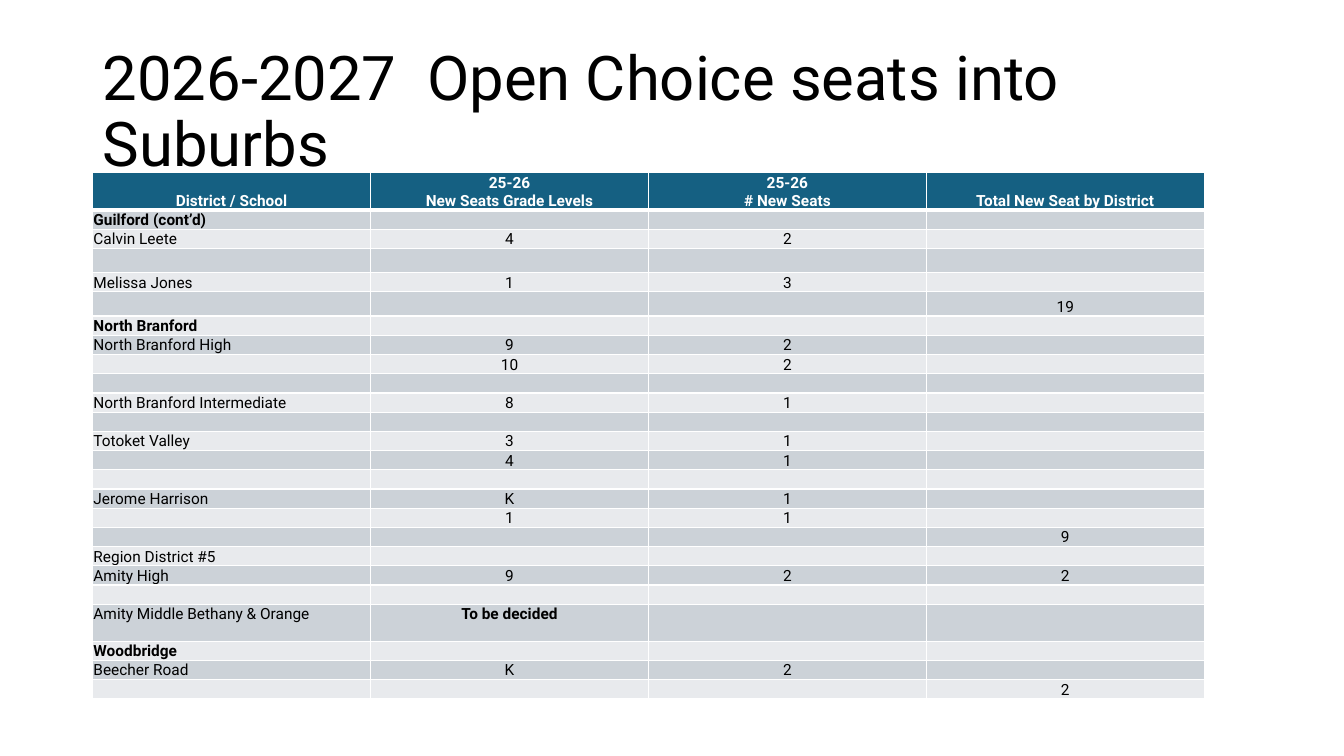
from dataclasses import dataclass

import pptx
import pptx.dml.color
import pptx.enum.text
import pptx.oxml.ns
import pptx.table
import pptx.util
from lxml import etree

Pt = pptx.util.Pt
RGBColor = pptx.dml.color.RGBColor
Align = pptx.enum.text.PP_ALIGN
Anchor = pptx.enum.text.MSO_ANCHOR
qn = pptx.oxml.ns.qn

FONT = "Roboto"
BLACK = RGBColor(0x00, 0x00, 0x00)
WHITE = RGBColor(0xFF, 0xFF, 0xFF)
HEADER_BLUE = RGBColor(0x15, 0x60, 0x82)
BAND_DARK = RGBColor(0xCC, 0xD2, 0xD8)
BAND_LIGHT = RGBColor(0xE8, 0xEA, 0xED)

COLUMN_WIDTH = 198.5
LINE, SPACED, DOUBLE = 13.45, 17.3, 26.5


@dataclass(frozen=True)
class SeatRow:
    school: str = ""
    grade: str = ""
    seats: str = ""
    total: str = ""
    height: float = LINE
    bold: tuple[int, ...] = ()
    anchor: Anchor = Anchor.BOTTOM

    def texts(self) -> tuple[str, ...]:
        return self.school, self.grade, self.seats, self.total


def district(name: str) -> SeatRow:
    return SeatRow(name, bold=(0,))


ROWS = [
    SeatRow("District / School", "25-26\nNew Seats Grade Levels", "25-26\n# New Seats",
            "Total New Seat by District", height=DOUBLE, bold=(0, 1, 2, 3)),
    district("Guilford (cont’d)"),
    SeatRow("Calvin Leete", "4", "2"),
    SeatRow(height=SPACED),
    SeatRow("Melissa Jones", "1", "3"),
    SeatRow(total="19", height=SPACED),
    district("North Branford"),
    SeatRow("North Branford High", "9", "2"),
    SeatRow(grade="10", seats="2"),
    SeatRow(),
    SeatRow("North Branford Intermediate", "8", "1"),
    SeatRow(),
    SeatRow("Totoket Valley", "3", "1"),
    SeatRow(grade="4", seats="1"),
    SeatRow(),
    SeatRow("Jerome Harrison", "K", "1"),
    SeatRow(grade="1", seats="1"),
    SeatRow(total="9"),
    SeatRow("Region District #5"),
    SeatRow("Amity High", "9", "2", "2"),
    SeatRow(),
    SeatRow("Amity Middle Bethany & Orange", "To be decided",
            height=DOUBLE, bold=(1,), anchor=Anchor.TOP),
    district("Woodbridge"),
    SeatRow("Beecher Road", "K", "2"),
    SeatRow(total="2"),
]


def format_runs(p, size: float, color: RGBColor, bold: bool = False) -> None:
    for r in p.runs:
        r.font.name = FONT
        r.font.size = Pt(size)
        r.font.bold = bold
        r.font.color.rgb = color


def add_borders(cell: pptx.table._Cell, top: float, bottom: float) -> None:
    """Draw white borders; call before the fill, which must follow them in the XML."""
    tc_pr = cell._tc.get_or_add_tcPr()
    for side, width in (("L", 1), ("R", 1), ("T", top), ("B", bottom)):
        ln = etree.SubElement(tc_pr, qn(f"a:ln{side}"), w=str(Pt(width)))
        fill = etree.SubElement(ln, qn("a:solidFill"))
        etree.SubElement(fill, qn("a:srgbClr"), val=str(WHITE))


def fill_cell(cell: pptx.table._Cell, row: SeatRow, i: int, j: int) -> None:
    header = i == 0
    add_borders(cell, top=3 if i == 1 else 1, bottom=3 if header else 1)
    cell.fill.solid()
    cell.fill.fore_color.rgb = HEADER_BLUE if header else BAND_DARK if i % 2 else BAND_LIGHT
    cell.margin_left = cell.margin_right = cell.margin_top = Pt(0.5)
    cell.margin_bottom = Pt(0)
    cell.vertical_anchor = row.anchor
    cell.text_frame.text = row.texts()[j]
    for p in cell.text_frame.paragraphs:
        p.alignment = Align.CENTER if header or j else Align.LEFT
        format_runs(p, 11, WHITE if header else BLACK, j in row.bold)
        if not p.runs:
            # An empty cell takes its line height from the end-of-paragraph size.
            end = etree.SubElement(p._p, qn("a:endParaRPr"), sz="1100")
            etree.SubElement(end, qn("a:latin"), typeface=FONT)


def add_title(s) -> None:
    sp = s.shapes.add_textbox(Pt(66.24), Pt(28.8), Pt(828), Pt(104.4))
    tf = sp.text_frame
    tf.word_wrap = True
    tf.vertical_anchor = Anchor.MIDDLE
    tf.text = "2026-2027  Open Choice seats into Suburbs"
    p = tf.paragraphs[0]
    p.line_spacing = 0.9
    format_runs(p, 44, BLACK)


def add_seat_table(s) -> None:
    columns = len(ROWS[0].texts())
    height = sum(row.height for row in ROWS)
    table = s.shapes.add_table(len(ROWS), columns, Pt(66.24), Pt(123.1),
                               Pt(columns * COLUMN_WIDTH), Pt(height)).table
    table.horz_banding = False
    for column in table.columns:
        column.width = Pt(COLUMN_WIDTH)
    for i, row in enumerate(ROWS):
        table.rows[i].height = Pt(row.height)
        for j in range(columns):
            fill_cell(table.cell(i, j), row, i, j)


def main() -> None:
    prs = pptx.Presentation()
    prs.slide_width, prs.slide_height = Pt(960), Pt(540)
    s = prs.slides.add_slide(prs.slide_layouts[6])
    add_title(s)
    add_seat_table(s)
    prs.save("out.pptx")


if __name__ == "__main__":
    main()
